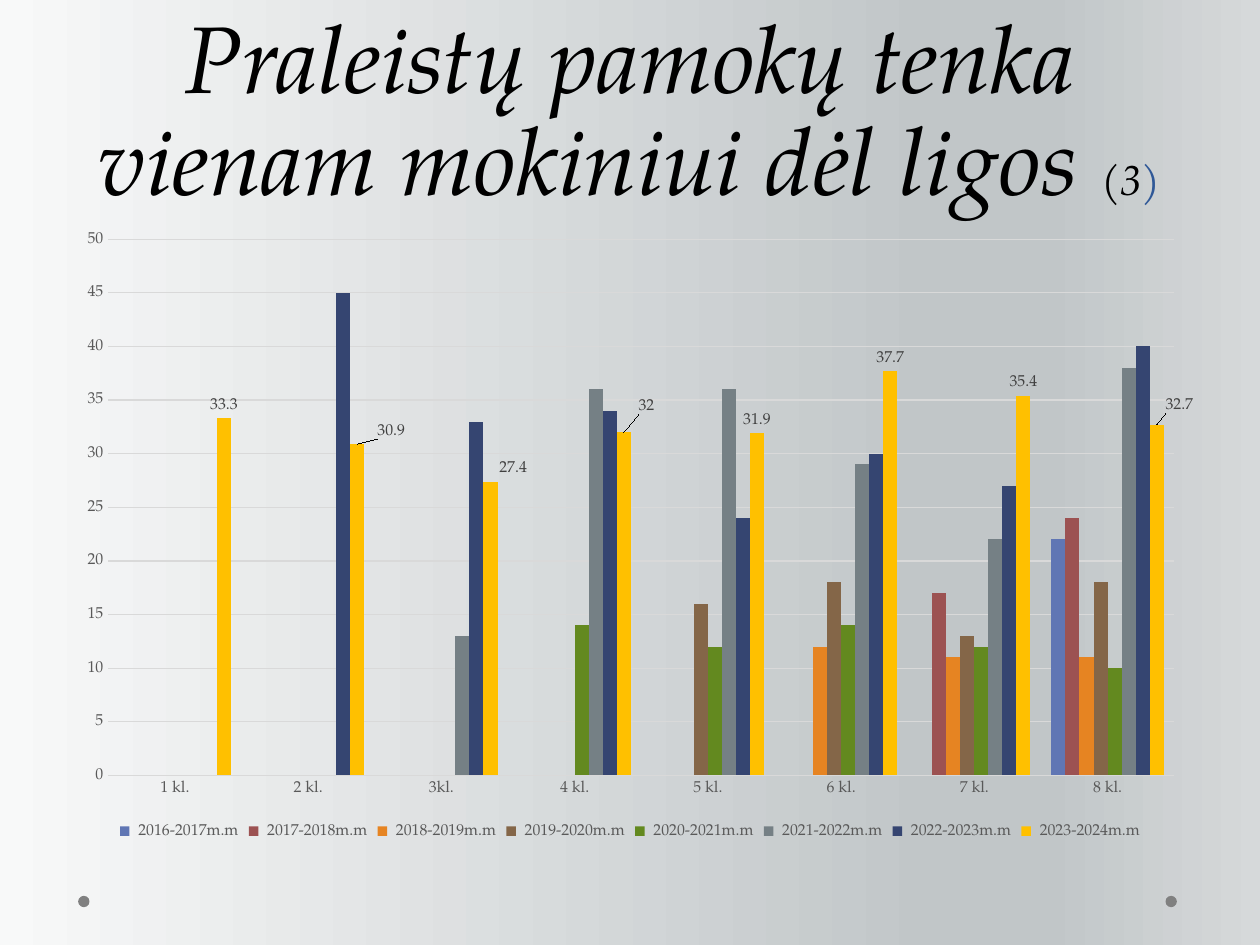
from dataclasses import dataclass

from lxml import etree
from pptx import Presentation
from pptx.chart.data import CategoryChartData
from pptx.dml.color import RGBColor
from pptx.enum.chart import XL_CHART_TYPE as ChartType
from pptx.enum.chart import XL_LABEL_POSITION as LabelPosition
from pptx.enum.chart import XL_LEGEND_POSITION as LegendPosition
from pptx.enum.chart import XL_TICK_MARK as TickMark
from pptx.enum.shapes import MSO_SHAPE as Shape
from pptx.enum.text import MSO_ANCHOR as Anchor
from pptx.enum.text import MSO_AUTO_SIZE as AutoSize
from pptx.enum.text import PP_ALIGN as Align
from pptx.oxml.ns import qn
from pptx.util import Inches, Pt


@dataclass(frozen=True)
class Theme:
    """Colours and type sizes of the slide."""
    font: str = "TeX Gyre Pagella"
    ink: str = "000000"
    accent: str = "2F5897"
    muted: str = "595959"
    label: str = "404040"
    grid: str = "D9D9D9"
    dot: str = "808080"
    years: tuple = ("6076B4", "9C5252", "E68422", "846648",
                    "63891F", "758085", "354571", "FFC000")
    backdrop: tuple = ((0, "F8F9F9"), (74, "C1C6C8"), (83, "C1C6C8"), (100, "D6D9DA"))
    title_size: int = 54
    title_leading: int = 58
    number_size: int = 24
    chart_size: int = 10
    small_size: int = 9


THEME = Theme()
CLASSES = ["1 kl.", "2 kl.", "3kl.", "4 kl.", "5 kl.", "6 kl.", "7 kl.", "8 kl."]
FIRST_YEAR = 2016
ABSENCES = [
    [22],
    [17, 24],
    [12, 11, 11],
    [16, 18, 13, 18],
    [14, 12, 14, 12, 10],
    [13, 36, 36, 29, 22, 38],
    [45, 33, 34, 24, 30, 27, 40],
    [33.3, 30.9, 27.4, 32, 31.9, 37.7, 35.4, 32.7],
]
LABEL_SHIFTS = {1: (0.03, 0), 2: (0.02, 0), 3: (0.02, -0.02), 7: (0.02, -0.01)}


def style_font(font, size, color, italic=None):
    """Set the typeface, size, colour and slant of a font."""
    font.name = THEME.font
    font.size = Pt(size)
    font.color.rgb = RGBColor.from_string(color)
    font.italic = italic


def add_text(paragraph, text, **font_format):
    """Append a formatted run to a paragraph."""
    run = paragraph.add_run()
    run.text = text
    style_font(run.font, **font_format)


def set_layout(parent, index, **settings):
    """Give a chart element a manual layout."""
    for old_layout in parent.findall(qn("c:layout")):
        parent.remove(old_layout)
    layout = etree.Element(qn("c:layout"))
    manual = etree.SubElement(layout, qn("c:manualLayout"))
    for tag, value in settings.items():
        etree.SubElement(manual, qn(f"c:{tag}")).set("val", str(value))
    parent.insert(index, layout)


def paint_backdrop(slide):
    """Fill the background with the horizontal grey gradient."""
    fill = slide.background.fill
    fill.gradient()
    fill.gradient_angle = 0
    stops = next(slide.background._cSld.iter(qn("a:gsLst")))
    for stop in list(stops):
        stops.remove(stop)
    for percent, color in THEME.backdrop:
        stop = etree.SubElement(stops, qn("a:gs"), pos=str(percent * 1000))
        etree.SubElement(stop, qn("a:srgbClr"), val=color)


def add_footer_dots(slide, left, top, width, height):
    """Place a dot at each end of the footer box."""
    for dot_left in (left, left + width - height):
        dot = slide.shapes.add_shape(Shape.OVAL, dot_left, top, height, height)
        dot.shadow.inherit = False
        dot.fill.solid()
        dot.fill.fore_color.rgb = RGBColor.from_string(THEME.dot)
        dot.line.fill.background()


def place_title(slide, left, top, width, height):
    """Fill and format the title placeholder."""
    title = slide.shapes.title
    title.left, title.top, title.width, title.height = left, top, width, height
    frame = title.text_frame
    frame.word_wrap = True
    frame.auto_size = AutoSize.NONE
    frame.vertical_anchor = Anchor.BOTTOM
    heading = frame.paragraphs[0]
    heading.alignment = Align.CENTER
    heading.line_spacing = Pt(THEME.title_leading)
    add_text(heading, "Praleistų pamokų tenka vienam mokiniui dėl ligos ",
             size=THEME.title_size, color=THEME.ink, italic=True)
    add_text(heading, "(3", size=THEME.number_size, color=THEME.ink, italic=True)
    add_text(heading, ")", size=THEME.number_size, color=THEME.accent, italic=True)


def absence_data():
    """Collect the series, each ending at the oldest class."""
    data = CategoryChartData()
    data.categories = CLASSES
    for year, values in enumerate(ABSENCES, FIRST_YEAR):
        missing = [None] * (len(CLASSES) - len(values))
        data.add_series(f" {year}-{year + 1}m.m", missing + values)
    return data


def format_axes(chart):
    """Style both axes and the gridlines."""
    for axis in (chart.category_axis, chart.value_axis):
        axis.major_tick_mark = axis.minor_tick_mark = TickMark.NONE
        axis.format.line.fill.background()
        style_font(axis.tick_labels.font, THEME.small_size, THEME.muted)
    scale = chart.value_axis
    scale.minimum_scale, scale.maximum_scale, scale.major_unit = 0, 50, 5
    scale.has_major_gridlines = True
    grid = scale.major_gridlines.format.line
    grid.color.rgb = RGBColor.from_string(THEME.grid)
    grid.width = Pt(0.75)


def label_latest_year(series):
    """Show the values of the latest year and nudge the crowded ones."""
    labels = series.data_labels
    labels.show_value = True
    labels.position = LabelPosition.OUTSIDE_END
    style_font(labels.font, THEME.small_size, THEME.label)
    for index, (shift_x, shift_y) in LABEL_SHIFTS.items():
        label = series.points[index].data_label
        style_font(label.font, THEME.small_size, THEME.label)
        label.position = LabelPosition.OUTSIDE_END
        set_layout(label._get_or_add_dLbl(), 1, x=shift_x, y=shift_y)


def add_absence_chart(slide, left, top, width, height):
    """Draw the clustered columns of absences by class and school year."""
    chart = slide.shapes.add_chart(
        ChartType.COLUMN_CLUSTERED, left, top, width, height, absence_data()).chart
    style_font(chart.font, THEME.chart_size, THEME.ink)
    chart.has_title = False
    chart.has_legend = True
    chart.legend.position = LegendPosition.BOTTOM
    chart.legend.include_in_layout = False
    style_font(chart.legend.font, THEME.small_size, THEME.muted)
    format_axes(chart)
    columns = chart.plots[0]
    columns.gap_width, columns.overlap = 150, 0
    columns.vary_by_categories = False
    for series, color in zip(columns.series, THEME.years):
        series.invert_if_negative = False
        series.format.fill.solid()
        series.format.fill.fore_color.rgb = RGBColor.from_string(color)
    label_latest_year(columns.series[-1])
    plot_area = next(chart._chartSpace.iter(qn("c:plotArea")))
    set_layout(plot_area, 0, layoutTarget="inner", xMode="edge", yMode="edge",
               x=0.04, y=0.03, w=0.94, h=0.86)


def main():
    """Build the slide and save it."""
    deck = Presentation()
    deck.slide_width, deck.slide_height = Inches(10), Inches(7.5)
    slide = deck.slides.add_slide(deck.slide_layouts[5])
    paint_backdrop(slide)
    add_footer_dots(slide, Inches(0.62), Inches(7.11), Inches(8.72), Inches(0.09))
    place_title(slide, Inches(0.5), Inches(0), Inches(9), Inches(1.75))
    add_absence_chart(slide, Inches(0.5), Inches(1.75), Inches(9), Inches(4.95))
    deck.save("out.pptx")


if __name__ == "__main__":
    main()
